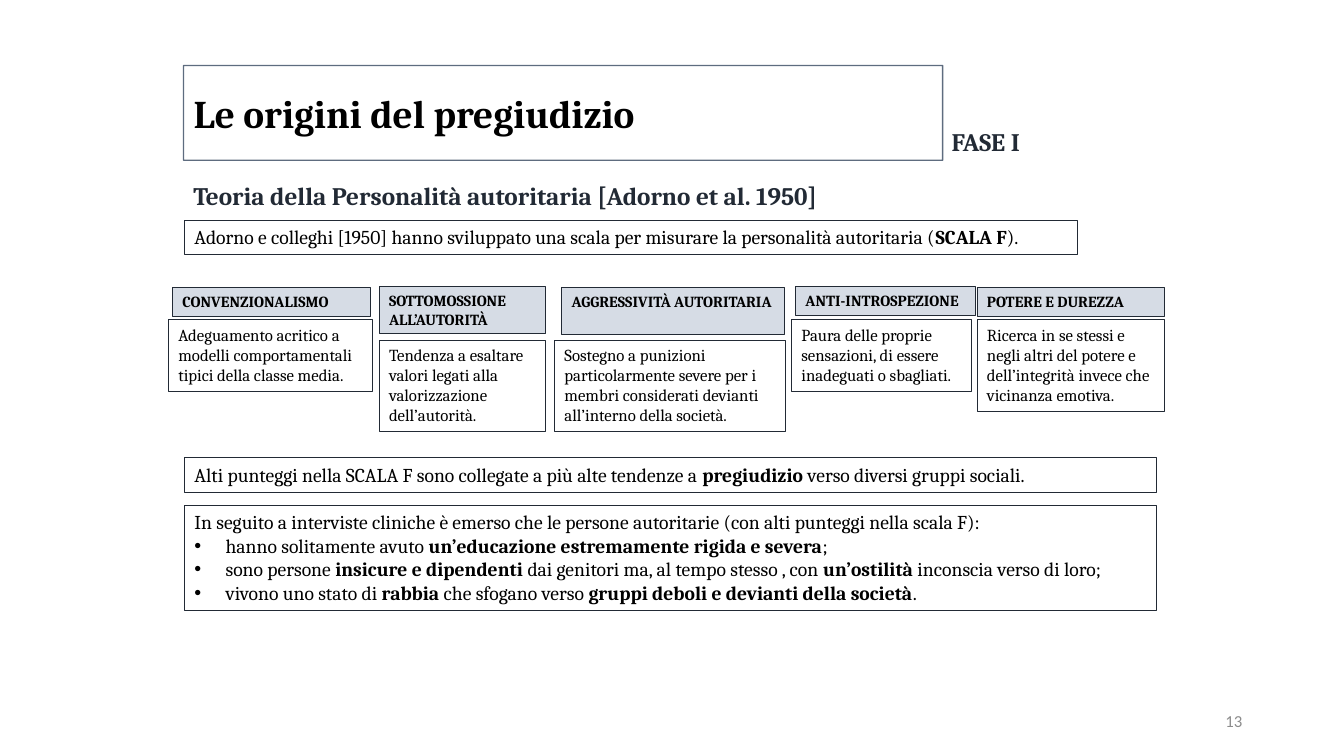
"""Build the slide on the origins of prejudice and the authoritarian personality."""
from lxml.etree import SubElement
from pptx import Presentation
from pptx.dml.color import RGBColor
from pptx.enum.shapes import MSO_SHAPE as Shape
from pptx.enum.text import MSO_ANCHOR as Anchor, MSO_AUTO_SIZE as AutoSize, PP_ALIGN as Align
from pptx.oxml.ns import qn
from pptx.util import Inches, Pt

COLORS = {"black": "000000", "navy": "222A35", "slate": "44546A", "pale": "D6DCE5", "grey": "8C8C8C"}

TITLE = "Le origini del pregiudizio"
TITLE_AT = (1.82, 0.65, 7.53, 0.94)
HEADINGS = [
    ("FASE I", (9.34, 1.2, 0.94, 0.4)),
    ("Teoria della Personalità autoritaria [Adorno et al. 1950]", (1.82, 1.74, 6.74, 0.4)),
]
PAGE_NUMBER = ("13", (9.42, 6.95, 3, 0.4))
STATEMENTS = [
    (["Adorno e colleghi [1950] hanno sviluppato una scala per misurare la personalità "
      "autoritaria (**SCALA F**)."], (1.83, 2.18, 8.85, 0.34)),
    (["Alti punteggi nella SCALA F sono collegate a più alte tendenze a **pregiudizio** "
      "verso diversi gruppi sociali."], (1.83, 4.54, 9.64, 0.34)),
    (["In seguito a interviste cliniche è emerso che le persone autoritarie "
      "(con alti punteggi nella scala F):",
      "• hanno solitamente avuto **un’educazione estremamente rigida e severa**;",
      "• sono persone **insicure e dipendenti **dai genitori ma, al tempo stesso , con "
      "**un’ostilità **inconscia verso di loro;",
      "• vivono uno stato di **rabbia** che sfogano verso "
      "**gruppi deboli e devianti della società**."], (1.83, 5.01, 9.64, 1.04)),
]
TRAITS = [
    ("CONVENZIONALISMO", (1.71, 2.85, 1.96, 0.29),
     "Adeguamento acritico a modelli comportamentali tipici della classe media.",
     (1.67, 3.17, 2.02, 0.71)),
    ("SOTTOMOSSIONE ALL’AUTORITÀ", (3.76, 2.84, 1.65, 0.47),
     "Tendenza a esaltare valori legati alla valorizzazione dell’autorità.",
     (3.76, 3.37, 1.65, 0.91)),
    ("AGGRESSIVITÀ AUTORITARIA", (5.57, 2.85, 2.21, 0.47),
     "Sostegno a punizioni particolarmente severe per i membri considerati devianti "
     "all’interno della società.", (5.5, 3.37, 2.29, 0.91)),
    ("ANTI-INTROSPEZIONE", (7.89, 2.84, 1.78, 0.29),
     "Paura delle proprie sensazioni, di essere inadeguati o sbagliati.",
     (7.85, 3.17, 1.78, 0.71)),
    ("POTERE E DUREZZA", (9.69, 2.85, 1.86, 0.29),
     "Ricerca in se stessi e negli altri del potere e dell’integrità invece che "
     "vicinanza emotiva.", (9.69, 3.17, 1.86, 0.91)),
]
TITLE_FONT = {"name": "Cambria", "size": Pt(28), "bold": True}
HEADING_FONT = {"name": "Cambria", "size": Pt(18), "bold": True}
STATEMENT_FONT = {"name": "Cambria", "size": Pt(14), "bold": False}
TRAIT_FONT = {"name": "Cambria", "size": Pt(11), "bold": True}
DETAIL_FONT = {"name": "Cambria", "size": Pt(12), "bold": False}
NUMBER_FONT = {"name": "Calibri", "size": Pt(12), "bold": False}
BULLET = "• "


def rgb(color):
    return RGBColor.from_string(COLORS[color])


def write(box, lines, font, color="black", align=Align.LEFT, anchor=Anchor.TOP):
    """Fill a box with lines in which ** switches bold on and off."""
    frame = box.text_frame
    layout = {"word_wrap": True, "auto_size": AutoSize.NONE, "vertical_anchor": anchor}
    for key, value in layout.items():
        setattr(frame, key, value)
    for index, line in enumerate(lines):
        paragraph = frame.add_paragraph() if index else frame.paragraphs[0]
        paragraph.alignment = align
        if line.startswith(BULLET):
            properties = paragraph._p.get_or_add_pPr()
            properties.set("marL", str(Inches(0.31)))
            properties.set("indent", str(-Inches(0.31)))
            SubElement(properties, qn("a:buFont"), typeface="Arial")
            SubElement(properties, qn("a:buChar"), char=BULLET.strip())
        for part, words in enumerate(line.removeprefix(BULLET).split("**")):
            run = paragraph.add_run()
            run.text = words
            for key, value in font.items():
                setattr(run.font, key, value)
            run.font.bold = font["bold"] or part % 2 == 1
            run.font.color.rgb = rgb(color)


def add_panel(slide, lines, place, font, fill=None):
    panel = slide.shapes.add_shape(Shape.RECTANGLE, *map(Inches, place))
    panel.shadow.inherit = False
    if fill:
        panel.fill.solid()
        panel.fill.fore_color.rgb = rgb(fill)
    else:
        panel.fill.background()
    panel.line.color.rgb = rgb("navy")
    panel.line.width = Pt(0.25)
    write(panel, lines, font)


def add_title(slide):
    title = slide.shapes.title
    for key, value in zip(("left", "top", "width", "height"), TITLE_AT):
        setattr(title, key, Inches(value))
    title.line.color.rgb = rgb("slate")
    title.line.width = Pt(1)
    outline_color = title.line.fill._xPr.find(".//" + qn("a:srgbClr"))
    SubElement(outline_color, qn("a:alpha"), val="86000")
    write(title, [TITLE], TITLE_FONT, anchor=Anchor.MIDDLE)


def main():
    deck = Presentation()
    deck.slide_width, deck.slide_height = Inches(13.33), Inches(7.5)
    slide = deck.slides.add_slide(deck.slide_layouts[5])
    add_title(slide)
    for heading, place in HEADINGS:
        write(slide.shapes.add_textbox(*map(Inches, place)), [heading], HEADING_FONT, "navy")
    for lines, place in STATEMENTS:
        add_panel(slide, lines, place, STATEMENT_FONT)
    for trait, trait_at, detail, detail_at in TRAITS:
        add_panel(slide, [trait], trait_at, TRAIT_FONT, "pale")
        add_panel(slide, [detail], detail_at, DETAIL_FONT)
    number, place = PAGE_NUMBER
    write(slide.shapes.add_textbox(*map(Inches, place)), [number], NUMBER_FONT, "grey",
          Align.RIGHT, Anchor.MIDDLE)
    deck.save("out.pptx")


if __name__ == "__main__":
    main()
